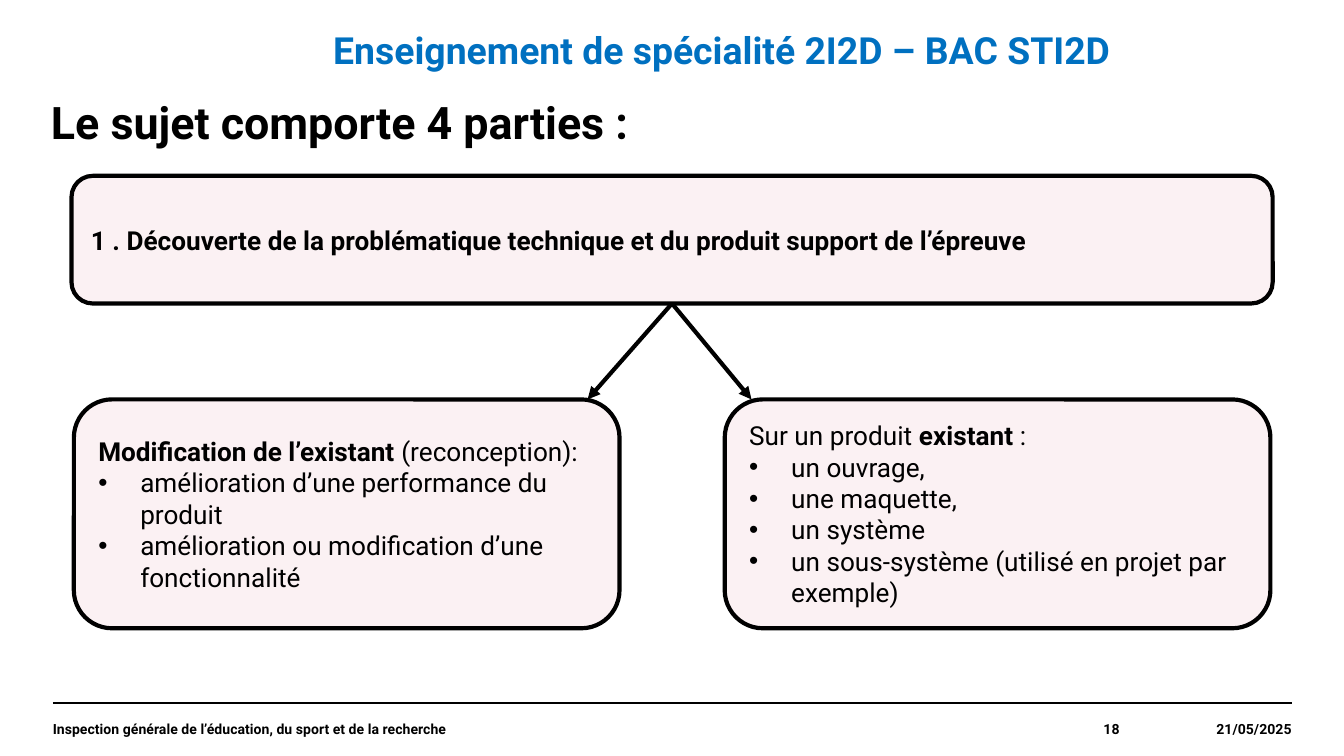
"""Build the slide on the four parts of the exam subject."""
import lxml.etree
import pptx
import pptx.dml.color
import pptx.enum.shapes
import pptx.enum.text
import pptx.oxml.ns
import pptx.util

Pt = pptx.util.Pt
qn = pptx.oxml.ns.qn
ALIGN = pptx.enum.text.PP_ALIGN
ANCHOR = pptx.enum.text.MSO_ANCHOR
COLORS = {"ink": "000000", "blue": "0070C0", "pink": "F2C9D1"}
BARE = dict.fromkeys(
    ("margin_left", "margin_top", "margin_right", "margin_bottom"), 0)


def color(name):
    return pptx.dml.color.RGBColor.from_string(COLORS[name])


def apply(item, form):
    for key, value in form.items():
        setattr(item, key, value)


def place(shape, left, top, width, height):
    apply(shape, {"left": Pt(left), "top": Pt(top),
                  "width": Pt(width), "height": Pt(height)})


def bullet(para, char, indent=0):
    props = para._p.get_or_add_pPr()
    props.set("marL", str(Pt(indent)))
    props.set("indent", str(-Pt(indent)))
    if char:
        lxml.etree.SubElement(props, qn("a:buFont")).set("typeface", "Arial")
        lxml.etree.SubElement(props, qn("a:buChar")).set("char", char)
    else:
        lxml.etree.SubElement(props, qn("a:buNone"))


def write(shape, lines, size, ink="ink", align=ALIGN.LEFT,
          anchor=ANCHOR.MIDDLE, frame=BARE, pitch=1.0):
    """Write lines: a leading • makes a bullet, and * switches bold."""
    text = shape.text_frame
    apply(text, {"word_wrap": True, "vertical_anchor": anchor,
                 "auto_size": pptx.enum.text.MSO_AUTO_SIZE.NONE, **frame})
    for row, line in enumerate(lines):
        para = text.add_paragraph() if row else text.paragraphs[0]
        listed = line.startswith("•")
        bullet(para, "•" if listed else None, 22.5 if listed else 0)
        apply(para, {"alignment": align, "line_spacing": pitch,
                     "space_before": Pt(0)})
        for turn, part in enumerate(line.lstrip("•").split("*")):
            if part:
                run = para.add_run()
                run.text = part
                apply(run.font, {"name": "Roboto", "size": Pt(size),
                                 "bold": turn % 2 == 1})
                run.font.color.rgb = color(ink)


def head(shape, box, line, size, ink="ink", pitch=1.0):
    place(shape, *box)
    write(shape, [line], size, ink, anchor=ANCHOR.TOP, pitch=pitch)


def foot(slide, left, width, line, align):
    box = slide.shapes.add_textbox(Pt(left), Pt(376.5), Pt(width), Pt(28))
    write(box, [line], 7.5, align=align)


def card(slide, box, lines):
    kind = pptx.enum.shapes.MSO_SHAPE.ROUNDED_RECTANGLE
    shape = slide.shapes.add_shape(kind, *map(Pt, box))
    shape.shadow.inherit = False
    shape.fill.solid()
    shape.fill.fore_color.rgb = color("pink")
    tint = shape._element.spPr.find(qn("a:solidFill")).find(qn("a:srgbClr"))
    lxml.etree.SubElement(tint, qn("a:alpha")).set("val", "25000")
    shape.line.color.rgb = color("ink")
    shape.line.width = Pt(2.25)
    write(shape, lines, 14, frame={})


def link(slide, start, end, width, arrow=False):
    kind = pptx.enum.shapes.MSO_CONNECTOR.STRAIGHT
    line = slide.shapes.add_connector(kind, *map(Pt, start + end))
    line.line.color.rgb = color("ink")
    line.line.width = Pt(width)
    props = line._element.spPr
    if arrow:
        stroke = props.find(qn("a:ln"))
        lxml.etree.SubElement(stroke, qn("a:tailEnd")).set("type", "triangle")
    lxml.etree.SubElement(props, qn("a:effectLst"))


def main():
    deck = pptx.Presentation()
    apply(deck, {"slide_width": Pt(720), "slide_height": Pt(405)})
    slide = deck.slides.add_slide(deck.slide_layouts[1])

    link(slide, (28.3, 376.5), (692, 376.5), 0.8)
    head(slide.shapes.title, (27.3, 54, 663, 28),
         "*Le sujet comporte 4 parties :", 24, pitch=0.9)
    head(slide.placeholders[1], (178.5, 14.4, 448, 28),
         "*Enseignement de spécialité 2I2D – BAC STI2D", 20, "blue")

    foot(slide, 600, 92, "*21/05/2025", ALIGN.RIGHT)
    foot(slide, 28.3, 465,
         "*Inspection générale de l’éducation, du sport et de la recherche",
         ALIGN.LEFT)
    foot(slide, 493.3, 106.5, "*18", ALIGN.RIGHT)

    card(slide, (38.3, 94.2, 643.5, 68.4),
         ["*1 . Découverte de la problématique technique et du produit "
          "support de l’épreuve"])
    sides = {
        39.6: ["*Modification de l’existant *(reconception):",
               "•amélioration d’une performance du produit",
               "•amélioration ou modification d’une fonctionnalité"],
        388.3: ["Sur un produit *existant *:", "•un ouvrage,",
                "•une maquette,", "•un système",
                "•un sous-système (utilisé en projet par exemple)"],
    }
    for left, lines in sides.items():
        card(slide, (left, 214, 292.3, 122.6), lines)
    for tip in (314.8, 402.6):
        link(slide, (360, 162.6), (tip, 214), 2.25, arrow=True)

    deck.save("out.pptx")


if __name__ == "__main__":
    main()
